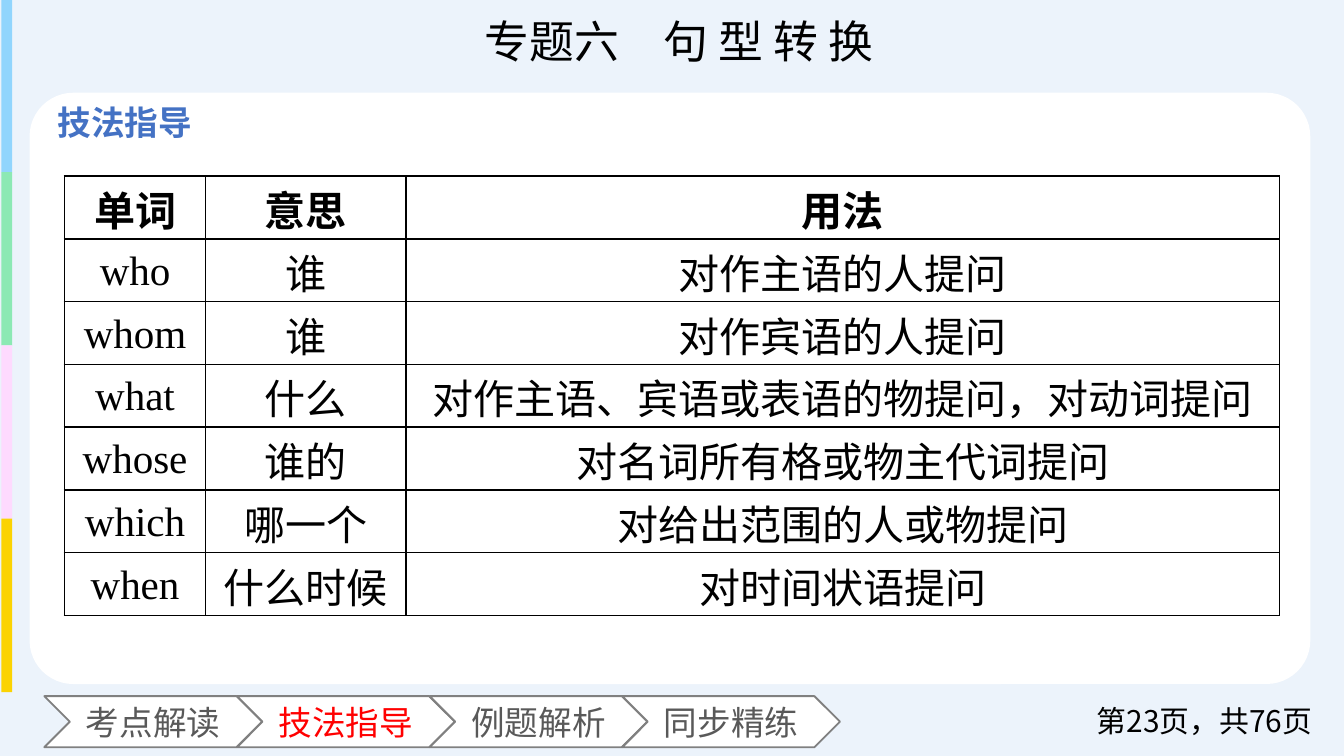
from pptx import Presentation
from pptx.dml.color import RGBColor
from pptx.enum.shapes import MSO_SHAPE as Shape
from pptx.enum.text import MSO_ANCHOR as Anchor, PP_ALIGN as Align
from pptx.oxml import parse_xml
from pptx.oxml.ns import nsdecls
from pptx.util import Inches, Pt

BLACK = RGBColor(0x00, 0x00, 0x00)
WHITE = RGBColor(0xFF, 0xFF, 0xFF)
GREY = RGBColor(0x80, 0x80, 0x80)
DARK_GREY = RGBColor(0x59, 0x59, 0x59)
RED = RGBColor(0xFF, 0x00, 0x00)
BLUE = RGBColor(0x44, 0x72, 0xC4)
PALE_BLUE = RGBColor(0xEC, 0xF3, 0xFB)
STRIPE_COLORS = [
    RGBColor(0x91, 0xD5, 0xFD),
    RGBColor(0x8C, 0xE9, 0xB4),
    RGBColor(0xFE, 0xDA, 0xFE),
    RGBColor(0xFB, 0xD3, 0x02),
]

SANS = "Noto Sans CJK SC"
SERIF = "Times New Roman"

SECTIONS = ["考点解读", "技法指导", "例题解析", "同步精练"]
CURRENT_SECTION = "技法指导"

COLUMN_WIDTHS = [1.05, 1.49, 6.5]
TABLE_HEIGHT = 3.27
QUESTION_WORDS = [
    ("单词", "意思", "用法"),
    ("who", "谁", "对作主语的人提问"),
    ("whom", "谁", "对作宾语的人提问"),
    ("what", "什么", "对作主语、宾语或表语的物提问，对动词提问"),
    ("whose", "谁的", "对名词所有格或物主代词提问"),
    ("which", "哪一个", "对给出范围的人或物提问"),
    ("when", "什么时候", "对时间状语提问"),
]


def set_text(frame, text, color, align=Align.CENTER, **font_format):
    """Write one paragraph, with the sans font for its Chinese characters."""
    frame.text = text
    paragraph = frame.paragraphs[0]
    paragraph.alignment = align
    run = paragraph.runs[0]
    for name, value in font_format.items():
        setattr(run.font, name, value)
    run.font.color.rgb = color
    latin = run.font._element.find("{*}latin")
    latin.addnext(parse_xml(f'<a:ea {nsdecls("a")} typeface="{SANS}"/>'))


def format_frame(frame, side_margin=0.0, wrap=True):
    values = {
        "margin_left": Inches(side_margin),
        "margin_right": Inches(side_margin),
        "margin_top": 0,
        "margin_bottom": 0,
        "vertical_anchor": Anchor.MIDDLE,
        "word_wrap": wrap,
    }
    for name, value in values.items():
        setattr(frame, name, value)


def add_block(slide, kind, box, fill, line=None):
    block = slide.shapes.add_shape(kind, *map(Inches, box))
    block.shadow.inherit = False
    block.fill.solid()
    block.fill.fore_color.rgb = fill
    if line is None:
        block.line.fill.background()
    else:
        block.line.color.rgb = line
        block.line.width = Pt(1)
    return block


def add_label(slide, box, text, color, **text_format):
    frame = slide.shapes.add_textbox(*map(Inches, box)).text_frame
    format_frame(frame, side_margin=0.1)
    set_text(frame, text, color, name=SANS, **text_format)


def add_title(slide, text):
    title = slide.shapes.title
    box = {"left": 1.76, "top": 0.05, "width": 6.58, "height": 0.5}
    for name, value in box.items():
        setattr(title, name, Inches(value))
    format_frame(title.text_frame)
    set_text(title.text_frame, text, BLACK, name=SERIF, size=Pt(24))


def add_stripes(slide):
    height = 1.29
    for i, color in enumerate(STRIPE_COLORS):
        add_block(slide, Shape.RECTANGLE, (0.01, i * height - 0.01, 0.08, height), color)


def add_section_bar(slide):
    left, last_left = 0.33, 4.63
    pitch = (last_left - left) / (len(SECTIONS) - 1)
    for i, section in enumerate(SECTIONS):
        chevron = add_block(slide, Shape.CHEVRON, (left + i * pitch, 5.18, 1.62, 0.38), WHITE, GREY)
        format_frame(chevron.text_frame, wrap=False)
        color = RED if section == CURRENT_SECTION else DARK_GREY
        set_text(chevron.text_frame, section, color, name=SANS, size=Pt(18))


def add_borders(cell):
    properties = cell._tc.get_or_add_tcPr()
    for i, side in enumerate(("lnL", "lnR", "lnT", "lnB")):
        properties.insert(i, parse_xml(
            f'<a:{side} {nsdecls("a")} w="{Pt(1)}">'
            f'<a:solidFill><a:srgbClr val="{BLACK}"/></a:solidFill></a:{side}>'))


def add_word_table(slide):
    row_count = len(QUESTION_WORDS)
    table = slide.shapes.add_table(
        row_count, len(COLUMN_WIDTHS), Inches(0.48), Inches(1.31),
        Inches(sum(COLUMN_WIDTHS)), Inches(TABLE_HEIGHT)).table
    for column, width in zip(table.columns, COLUMN_WIDTHS):
        column.width = Inches(width)
    for r, words in enumerate(QUESTION_WORDS):
        table.rows[r].height = Inches(TABLE_HEIGHT / row_count)
        for c, word in enumerate(words):
            cell = table.cell(r, c)
            cell.fill.background()
            cell.vertical_anchor = Anchor.MIDDLE
            cell.margin_top, cell.margin_bottom = Inches(0.02), 0
            set_text(cell.text_frame, word, BLACK, name=SERIF, size=Pt(22), bold=r == 0)
            add_borders(cell)


def main():
    prs = Presentation()
    prs.slide_width = Inches(10)
    prs.slide_height = prs.slide_width * 9 // 16
    slide = prs.slides.add_slide(prs.slide_layouts[5])
    slide.background.fill.solid()
    slide.background.fill.fore_color.rgb = PALE_BLUE

    add_title(slide, "专题六　句 型 转 换")
    add_stripes(slide)
    panel = add_block(slide, Shape.ROUNDED_RECTANGLE, (0.22, 0.69, 9.53, 4.4), WHITE)
    panel.adjustments[0] = 0.074
    add_label(slide, (0.33, 0.71, 1.29, 0.4), CURRENT_SECTION, BLUE,
              align=Align.LEFT, size=Pt(18), bold=True)
    add_section_bar(slide)
    add_label(slide, (7.83, 5.21, 2.03, 0.3), "第23页，共76页", BLACK,
              align=Align.RIGHT, size=Pt(16))
    add_word_table(slide)
    prs.save("out.pptx")


if __name__ == "__main__":
    main()
